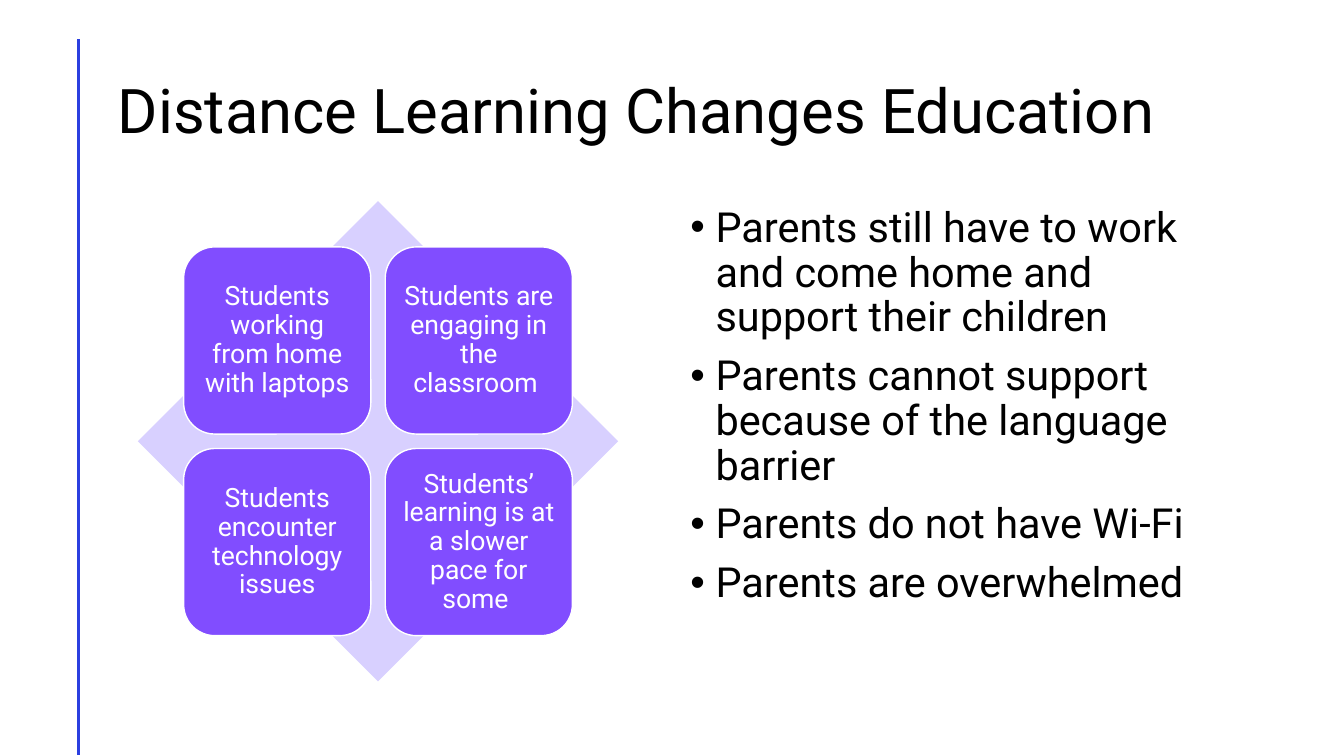
from dataclasses import dataclass

from lxml import etree
from pptx import Presentation
from pptx.dml.color import RGBColor
from pptx.enum.shapes import MSO_CONNECTOR, MSO_SHAPE
from pptx.enum.text import MSO_ANCHOR, MSO_AUTO_SIZE, PP_ALIGN
from pptx.oxml.ns import qn
from pptx.util import Pt

STRAIGHT = MSO_CONNECTOR.STRAIGHT
DIAMOND = MSO_SHAPE.DIAMOND
ROUNDED = MSO_SHAPE.ROUNDED_RECTANGLE
TOP, MIDDLE = MSO_ANCHOR.TOP, MSO_ANCHOR.MIDDLE
LEFT, CENTER = PP_ALIGN.LEFT, PP_ALIGN.CENTER
NO_AUTOFIT = MSO_AUTO_SIZE.NONE
TITLE_ONLY = 5


@dataclass
class Theme:
    font: str = "Roboto"
    ink: str = "000000"
    paper: str = "FFFFFF"
    rule: str = "2B3FE0"
    diamond: str = "D8D0FF"
    card: str = "814DFF"
    title_size: float = 44
    body_size: float = 29.6
    card_size: float = 19
    line_spacing: float = 0.9


class SlideBuilder:
    def __init__(self, page, theme):
        self.page = page
        self.theme = theme

    def set_text(self, box, lines, size, color, align=LEFT, anchor=MIDDLE):
        frame = box.text_frame
        frame.text = "\n".join(lines)
        frame.word_wrap = True
        frame.auto_size = NO_AUTOFIT
        frame.vertical_anchor = anchor
        for para in frame.paragraphs:
            para.alignment = align
            para.line_spacing = self.theme.line_spacing
            for span in para.runs:
                span.font.name = self.theme.font
                span.font.size = Pt(size)
                span.font.color.rgb = RGBColor.from_string(color)
        return frame

    def title(self, text, left, top, width, height):
        box = self.page.shapes.title
        box.left, box.top, box.width, box.height = map(Pt, (left, top, width, height))
        self.set_text(box, [text], self.theme.title_size, self.theme.ink)

    def vertical_rule(self, x, top, bottom):
        rule = self.page.shapes.add_connector(STRAIGHT, Pt(x), Pt(top), Pt(x), Pt(bottom))
        rule.line.color.rgb = RGBColor.from_string(self.theme.rule)
        rule.line.width = Pt(2)
        etree.SubElement(rule.element.spPr, qn("a:effectLst"))

    def square_shape(self, kind, center_x, center_y, side, fill):
        shape = self.page.shapes.add_shape(
            kind, Pt(center_x - side / 2), Pt(center_y - side / 2), Pt(side), Pt(side))
        shape.shadow.inherit = False
        shape.fill.solid()
        shape.fill.fore_color.rgb = RGBColor.from_string(fill)
        shape.line.fill.background()
        return shape

    def card(self, text, center_x, center_y, side):
        card = self.square_shape(ROUNDED, center_x, center_y, side, self.theme.card)
        card.line.color.rgb = RGBColor.from_string(self.theme.paper)
        card.line.width = Pt(1)
        frame = self.set_text(card, [text], self.theme.card_size, self.theme.paper, CENTER)
        frame.margin_left = frame.margin_right = Pt(5.7)
        frame.margin_top = frame.margin_bottom = Pt(5.7)

    def card_matrix(self, texts, center_x, center_y, diamond_side, card_side, pitch):
        self.square_shape(DIAMOND, center_x, center_y, diamond_side, self.theme.diamond)
        for index, text in enumerate(texts):
            row, column = divmod(index, 2)
            self.card(text, center_x + (column - 0.5) * pitch,
                      center_y + (row - 0.5) * pitch, card_side)

    def bullets(self, items, left, top, width, height):
        box = self.page.shapes.add_textbox(Pt(left), Pt(top), Pt(width), Pt(height))
        frame = self.set_text(box, items, self.theme.body_size, self.theme.ink, anchor=TOP)
        for para in frame.paragraphs:
            para.space_before = Pt(10)
            properties = para._p.get_or_add_pPr()
            properties.set("marL", str(Pt(18)))
            properties.set("indent", str(-Pt(18)))
            etree.SubElement(properties, qn("a:buFont"), typeface="Arial")
            etree.SubElement(properties, qn("a:buChar"), char="•")


def main():
    deck = Presentation()
    deck.slide_width, deck.slide_height = Pt(960), Pt(540)
    page = deck.slides.add_slide(deck.slide_layouts[TITLE_ONLY])
    builder = SlideBuilder(page, Theme())
    builder.vertical_rule(56.2, 28, 539.5)
    builder.title(" Distance Learning Changes Education ", 66, 29, 828, 104)
    builder.card_matrix(
        [
            "Students working from home with laptops",
            "Students are engaging in the classroom ",
            "Students encounter technology issues",
            "Students’ learning is at a slower pace for some ",
        ],
        center_x=270, center_y=315.2, diamond_side=343, card_side=133.7, pitch=144)
    builder.bullets(
        [
            "Parents still have to work and come home and support their children",
            "Parents cannot support because of the language barrier",
            "Parents do not have Wi-Fi",
            "Parents are overwhelmed",
        ],
        486, 144, 408, 343)
    deck.save("out.pptx")


if __name__ == "__main__":
    main()
